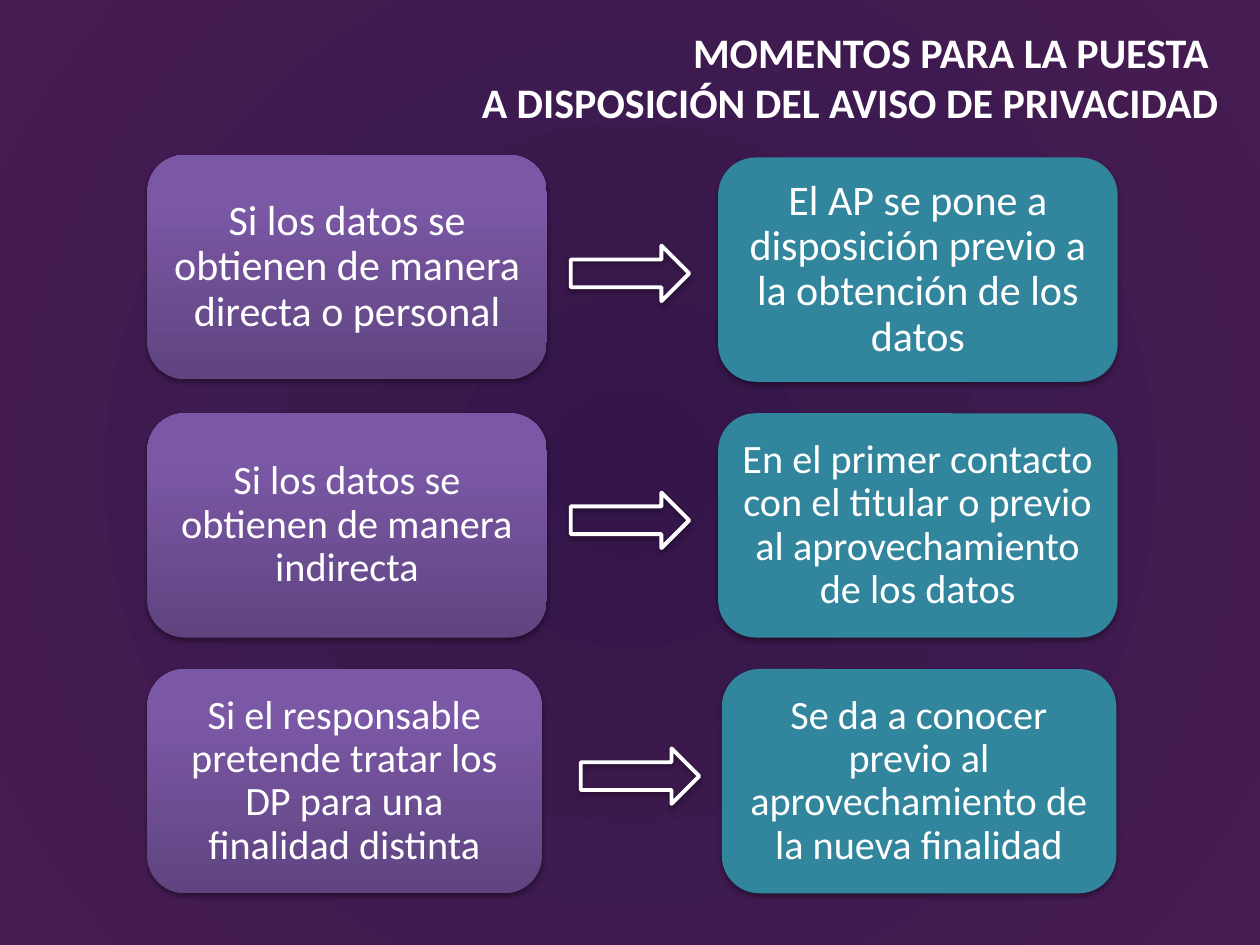
from pptx import Presentation
from pptx.dml.color import RGBColor as RGB
from pptx.enum.shapes import MSO_SHAPE as Geo
from pptx.enum.text import MSO_ANCHOR as Anchor, MSO_AUTO_SIZE as Auto, PP_ALIGN as Align
from pptx.oxml import parse_xml
from pptx.oxml.ns import nsdecls, qn
from pptx.util import Inches, Pt

HUES = {"white": "FFFFFF", "teal": "31859C", "black": "000000",
        "core": "34164A", "edge": "461D53",
        "dark": "5F4480", "mid": "7B58A6", "light": "7C57A8"}
FONT = "Calibri"
TITLE = ["MOMENTOS PARA LA PUESTA ", "A DISPOSICIÓN DEL AVISO DE PRIVACIDAD"]
LEFT, HIGH = 1.17, 1.78
ROWS = [
    dict(tops=(1.23, 1.25), right=5.7, wide=3.17, arrow=(4.53, 1.95), size=24,
         texts=("Si los datos se obtienen de manera directa o personal",
                "El AP se pone a disposición previo a la obtención de los datos")),
    dict(tops=(3.28, 3.28), right=5.7, wide=3.17, arrow=(4.53, 3.91), size=23,
         texts=("Si los datos se obtienen de manera indirecta",
                "En el primer contacto con el titular o previo al "
                "aprovechamiento de los datos")),
    dict(tops=(5.31, 5.31), right=5.73, wide=3.13, arrow=(4.61, 5.94), size=23,
         texts=("Si el responsable pretende tratar los DP para una finalidad distinta",
                "Se da a conocer previo al aprovechamiento de la nueva finalidad")),
]


def color(name):
    return RGB.from_string(HUES[name])


def blend(props, stops, tail):
    marks = "".join(f'<a:gs pos="{pos * 1000}"><a:srgbClr val="{HUES[name]}"/></a:gs>'
                    for pos, name in stops)
    fill = parse_xml(f'<a:gradFill {nsdecls("a")} rotWithShape="1">'
                     f'<a:gsLst>{marks}</a:gsLst>{tail}</a:gradFill>')
    props.replace(props.find(qn("a:solidFill")), fill)


def shade(shape):
    shape.shadow.inherit = False
    glow = parse_xml(f'<a:outerShdw {nsdecls("a")} blurRad="{Pt(3.1)}" dist="{Pt(1.8)}" '
                     f'dir="5400000" rotWithShape="0"><a:srgbClr val="{HUES["black"]}">'
                     f'<a:alpha val="35000"/></a:srgbClr></a:outerShdw>')
    shape.element.spPr.find(qn("a:effectLst")).append(glow)


def write(para, text, size, align, bold=False):
    para.alignment = align
    run = para.add_run()
    run.text = text
    font = run.font
    font.name, font.size, font.bold = FONT, Pt(size), bold
    font.color.rgb = color("white")


def add_back(slide):
    slide.background.fill.solid()
    blend(slide.element.find(".//" + qn("p:bgPr")), [(0, "core"), (100, "edge")],
          '<a:path path="circle"><a:fillToRect l="50000" t="50000" r="50000" b="50000"/></a:path>')


def add_title(slide, left, top, wide, high):
    title = slide.shapes.title
    title.left, title.top = Inches(left), Inches(top)
    title.width, title.height = Inches(wide), Inches(high)
    frame = title.text_frame
    frame.word_wrap = True
    frame.auto_size = Auto.SHAPE_TO_FIT_TEXT
    frame.vertical_anchor = Anchor.TOP
    for i, line in enumerate(TITLE):
        para = frame.add_paragraph() if i else frame.paragraphs[0]
        write(para, line, 24, Align.RIGHT, True)


def add_card(slide, left, top, wide, high, text, size):
    card = slide.shapes.add_shape(Geo.ROUNDED_RECTANGLE, Inches(left), Inches(top),
                                  Inches(wide), Inches(high))
    card.fill.solid()
    card.fill.fore_color.rgb = color("teal")
    card.line.fill.background()
    shade(card)
    frame = card.text_frame
    frame.word_wrap = True
    frame.vertical_anchor = Anchor.MIDDLE
    frame.margin_left = frame.margin_right = Inches(0.1)
    frame.margin_top = frame.margin_bottom = Inches(0.1)
    para = frame.paragraphs[0]
    para.line_spacing = 0.9
    write(para, text, size, Align.CENTER)
    return card


def add_arrow(slide, left, top, wide, high):
    arrow = slide.shapes.add_shape(Geo.RIGHT_ARROW, Inches(left), Inches(top),
                                   Inches(wide), Inches(high))
    arrow.fill.background()
    arrow.line.color.rgb = color("white")
    arrow.line.width = Pt(2.25)
    shade(arrow)


def add_row(slide, row):
    (near, far), (case, moment) = row["tops"], row["texts"]
    card = add_card(slide, LEFT, near, row["wide"], HIGH, case, row["size"])
    blend(card.element.spPr, [(0, "dark"), (80, "mid"), (100, "light")],
          '<a:lin ang="16200000" scaled="0"/>')
    add_card(slide, row["right"], far, row["wide"], HIGH, moment, row["size"])
    add_arrow(slide, *row["arrow"], 0.94, 0.44)


def main():
    deck = Presentation()
    deck.slide_width, deck.slide_height = Inches(10), Inches(7.5)
    slide = deck.slides.add_slide(deck.slide_layouts[5])
    add_back(slide)
    add_title(slide, 2.66, 0.16, 7.11, 0.91)
    for row in ROWS:
        add_row(slide, row)
    deck.save("out.pptx")


if __name__ == "__main__":
    main()
